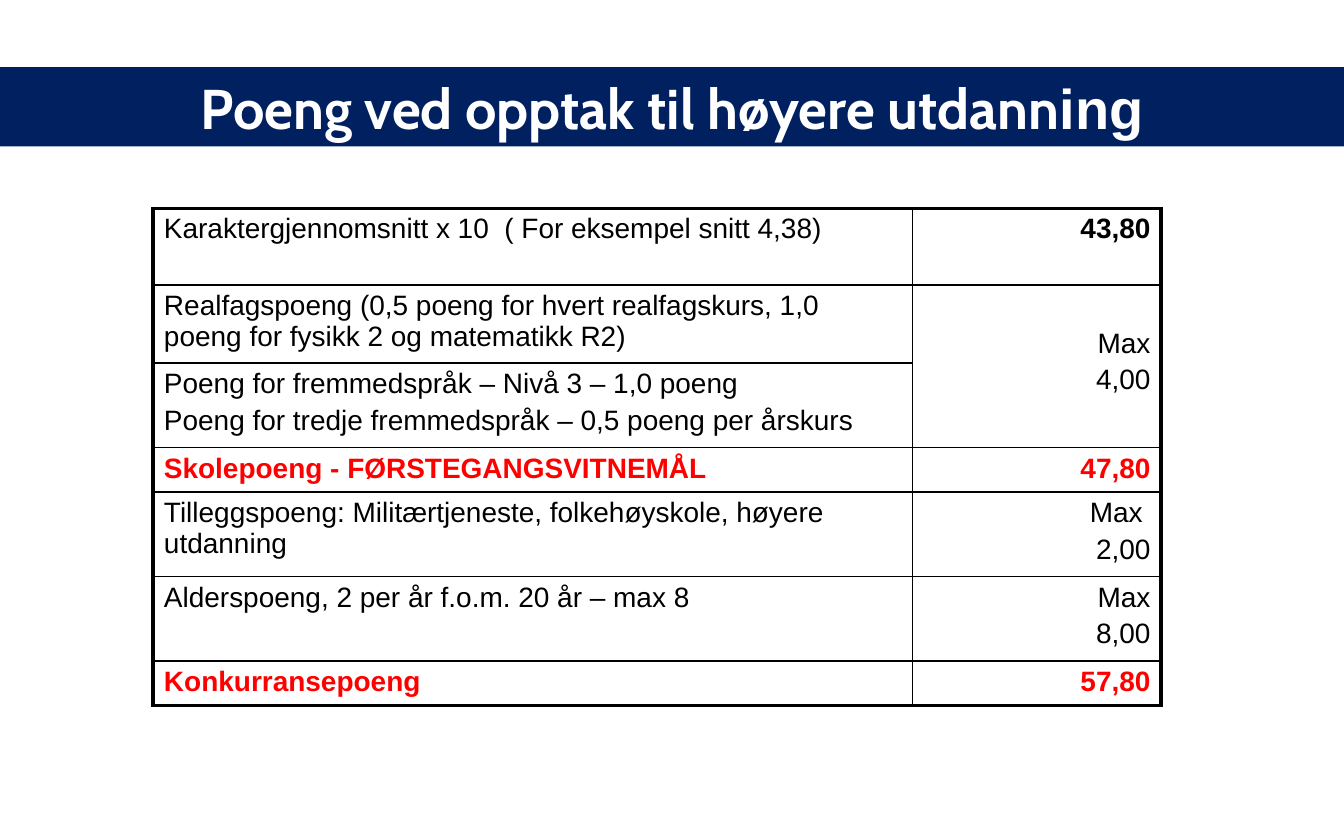
from lxml import etree
from pptx import Presentation
from pptx.dml.color import RGBColor
from pptx.enum import text
from pptx.oxml import ns
from pptx.util import Inches, Pt

NAVY = RGBColor(0x00, 0x20, 0x60)
WHITE = RGBColor(0xFF, 0xFF, 0xFF)
BLACK = RGBColor(0x00, 0x00, 0x00)
RED = RGBColor(0xFF, 0x00, 0x00)
THIN, THICK = Pt(1), Pt(2.25)
COLS = [5.65, 1.85]

# row height, labels, points, points in bold, text colour
ROWS = [
    (0.57, ["Karaktergjennomsnitt x 10  ( For eksempel snitt 4,38)"],
     ["43,80"], True, BLACK),
    (0.58, ["Realfagspoeng (0,5 poeng for hvert realfagskurs, 1,0 poeng "
            "for fysikk 2 og matematikk R2)"], ["Max", "4,00"], False, BLACK),
    (0.63, ["Poeng for fremmedspråk – Nivå 3 – 1,0 poeng",
            "Poeng for tredje fremmedspråk – 0,5 poeng per årskurs"],
     [], False, BLACK),
    (0.33, ["Skolepoeng - FØRSTEGANGSVITNEMÅL"], ["47,80"], True, RED),
    (0.63, ["Tilleggspoeng: Militærtjeneste, folkehøyskole, høyere utdanning"],
     ["Max ", "2,00"], False, BLACK),
    (0.63, ["Alderspoeng, 2 per år f.o.m. 20 år – max 8"],
     ["Max", "8,00"], False, BLACK),
    (0.33, ["Konkurransepoeng"], ["57,80"], True, RED),
]


def add_title(slide, left, top, width, height):
    title = slide.shapes.title
    title.left, title.top = Inches(left), Inches(top)
    title.width, title.height = Inches(width), Inches(height)
    title.fill.solid()
    title.fill.fore_color.rgb = NAVY
    frame = title.text_frame
    frame.auto_size = text.MSO_AUTO_SIZE.NONE
    frame.vertical_anchor = text.MSO_ANCHOR.MIDDLE
    para = frame.paragraphs[0]
    para.alignment = text.PP_ALIGN.CENTER
    para.font.size, para.font.bold = Pt(30), True
    para.font.color.rgb = WHITE
    for words, face in (("Poeng ved opptak til høyere utdann", "Cabin"),
                        ("ing", "Arial")):
        run = para.add_run()
        run.text = words
        run.font.name = face


def set_edges(cell, widths):
    """Draw the left, right, top and bottom borders in the given widths."""
    props = cell._tc.get_or_add_tcPr()
    for side, width in zip("LRTB", widths):
        line = etree.SubElement(props, ns.qn(f"a:ln{side}"), w=str(width))
        fill = etree.SubElement(line, ns.qn("a:solidFill"))
        etree.SubElement(fill, ns.qn("a:srgbClr"), val=str(BLACK))


def fill_cell(cell, lines, align, bold, color):
    cell.margin_left = cell.margin_right = Inches(0.08)
    cell.margin_top = cell.margin_bottom = Inches(0.04)
    cell.fill.background()
    frame = cell.text_frame
    for i, line in enumerate(lines):
        para = frame.add_paragraph() if i else frame.paragraphs[0]
        para.text = line
        para.alignment = align
        para.space_before = Pt(3 if i else 0)
        font = para.font
        font.name, font.size, font.bold = "Arial", Pt(15), bold
        font.color.rgb = color


def add_points(slide, left, top):
    """Add the table of points with a heavy frame and thin inner lines."""
    total = sum(row[0] for row in ROWS)
    table = slide.shapes.add_table(
        len(ROWS), len(COLS), Inches(left), Inches(top),
        Inches(sum(COLS)), Inches(total)).table
    table.first_row = table.horz_banding = False
    for col, width in zip(table.columns, COLS):
        col.width = Inches(width)
    last = len(ROWS) - 1
    for r, (height, labels, points, bold, color) in enumerate(ROWS):
        table.rows[r].height = Inches(height)
        above = THICK if r == 0 else THIN
        below = THICK if r == last else THIN
        label, value = table.cell(r, 0), table.cell(r, 1)
        set_edges(label, (THICK, THIN, above, below))
        set_edges(value, (THIN, THICK, above, below))
        fill_cell(label, labels, text.PP_ALIGN.LEFT, color == RED, color)
        fill_cell(value, points, text.PP_ALIGN.RIGHT, bold, color)
    shared = table.cell(1, 1)
    shared.merge(table.cell(2, 1))
    shared.margin_top = Inches(0.32)


def main():
    deck = Presentation()
    deck.slide_width, deck.slide_height = Inches(10), Inches(6.25)
    slide = deck.slides.add_slide(deck.slide_layouts[5])
    add_title(slide, 0, 0.5, 10, 0.59)
    add_points(slide, 1.14, 1.55)
    deck.save("out.pptx")


if __name__ == "__main__":
    main()
